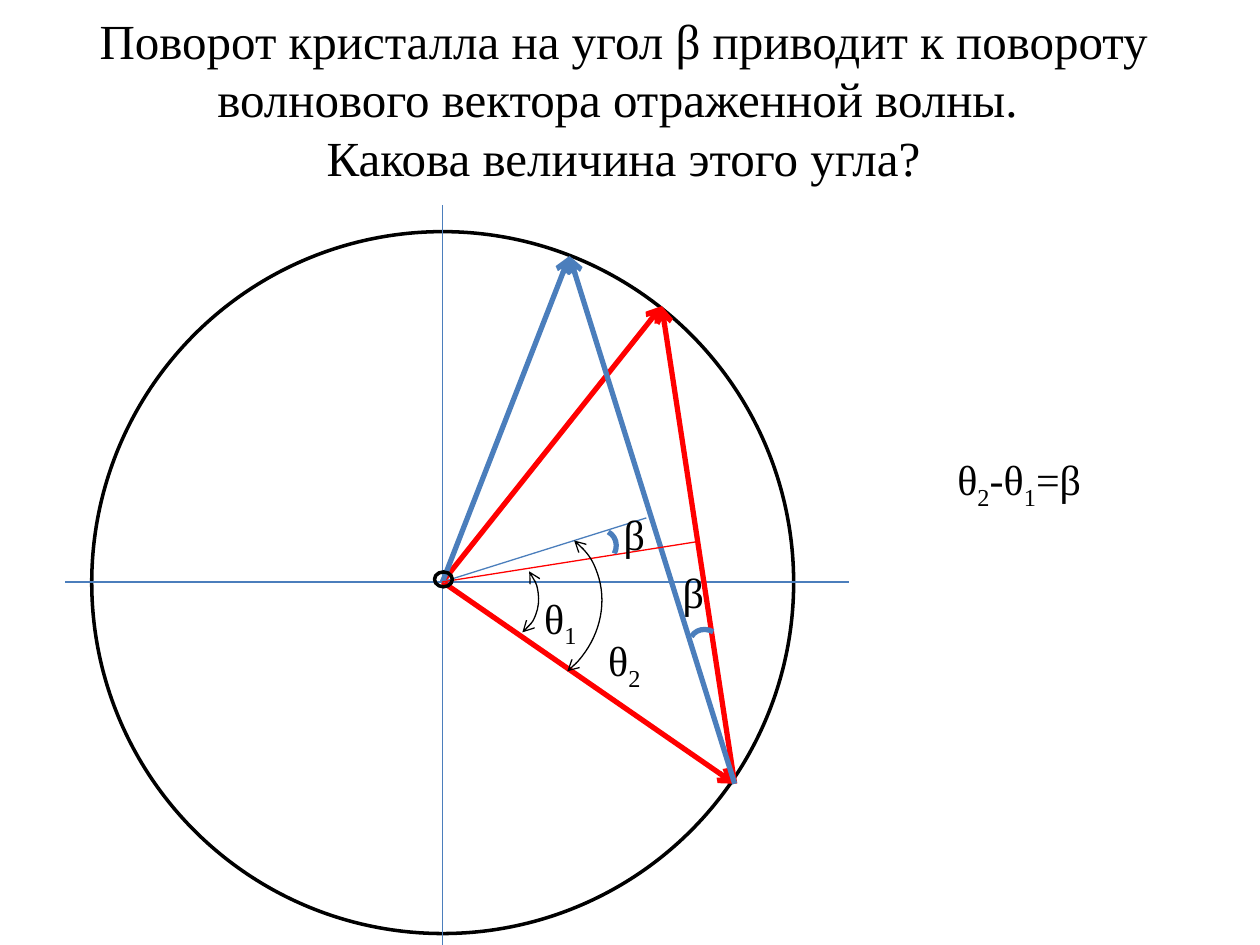
from lxml.etree import SubElement
from pptx import Presentation
from pptx.dml.color import RGBColor
from pptx.enum.shapes import MSO_CONNECTOR as Connector, MSO_SHAPE as Preset
from pptx.enum.text import MSO_AUTO_SIZE as AutoSize, PP_ALIGN as Align
from pptx.oxml.ns import qn
from pptx.util import Cm, Pt

BLACK = RGBColor(0x00, 0x00, 0x00)
WHITE = RGBColor(0xFF, 0xFF, 0xFF)
RED = RGBColor(0xFF, 0x00, 0x00)
BLUE = RGBColor(0x4B, 0x7E, 0xBC)
FONT = "Times New Roman"
THIN, MEDIUM, THICK = 0.75, 2, 3

CENTRE = (8.92, 11.73)
INCIDENT_TIP = (14.81, 15.8)
RED_TIP = (13.34, 6.17)
BLUE_TIP = (11.48, 5.16)


def style_line(shape, color, width, ends=()):
    """Set colour, width and open arrowheads of an outline."""
    shape.line.color.rgb = color
    shape.line.width = Pt(width)
    for end in ends:
        SubElement(shape.line._get_or_add_ln(), qn(f"a:{end}"), type="arrow")


def add_line(page, start, finish, color, width=THIN, ends=()):
    """Draw a straight line between two points in centimetres."""
    line = page.shapes.add_connector(
        Connector.STRAIGHT, *(Cm(value) for value in start + finish))
    style_line(line, color, width, ends)
    SubElement(line._element.spPr, qn("a:effectLst"))


def add_vector(page, start, finish, color):
    """Draw a thick arrow from start to finish."""
    add_line(page, start, finish, color, THICK, ["tailEnd"])


def add_outline(page, preset, place, color, width, fill=None, ends=()):
    """Draw an outlined preset shape, empty unless a fill is given."""
    shape = page.shapes.add_shape(preset, *map(Cm, place))
    shape.shadow.inherit = False
    if fill is None:
        shape.fill.background()
    else:
        shape.fill.solid()
        shape.fill.fore_color.rgb = fill
    style_line(shape, color, width, ends)
    return shape


def add_arc(page, place, rotation, color, width, ends=(), finish=0):
    """Draw a rotated arc that starts at the top of its ellipse."""
    arc = add_outline(page, Preset.ARC, place, color, width, ends=ends)
    arc.adjustments[1] = finish
    arc.rotation = rotation


def add_text(page, place, paragraphs, size=24, wrap=False, align=None, fill=None):
    """Write paragraphs of runs, setting digits as subscripts."""
    box = page.shapes.add_textbox(*map(Cm, place))
    if fill is not None:
        box.fill.solid()
        box.fill.fore_color.rgb = fill
    frame = box.text_frame
    frame.word_wrap = wrap
    frame.auto_size = AutoSize.SHAPE_TO_FIT_TEXT
    for index, runs in enumerate(paragraphs):
        para = frame.add_paragraph() if index else frame.paragraphs[0]
        para.alignment = align
        for text in runs:
            span = para.add_run()
            span.text = text
            span.font.name = FONT
            span.font.size = Pt(size)
            span.font.color.rgb = BLACK
            if text.isdigit():
                span._r.get_or_add_rPr().set("baseline", "-25000")


def add_construction(page):
    """Draw the circle, its axes, the wave vectors and the normals."""
    add_outline(page, Preset.OVAL, (1.85, 4.67, 14.15, 14.15), BLACK, MEDIUM, WHITE)
    add_line(page, (1.32, CENTRE[1]), (17.12, CENTRE[1]), BLUE)
    add_line(page, (CENTRE[0], 4.14), (CENTRE[0], 19.74), BLUE)
    add_vector(page, CENTRE, INCIDENT_TIP, RED)
    for tip, color in ((RED_TIP, RED), (BLUE_TIP, BLUE)):
        add_vector(page, CENTRE, tip, color)
        add_vector(page, INCIDENT_TIP, tip, color)
    add_line(page, CENTRE, (13.03, 10.44), BLUE)
    add_line(page, CENTRE, (14.05, 10.92), RED)
    add_outline(page, Preset.OVAL, (8.76, 11.53, 0.36, 0.3), BLACK, MEDIUM)


def add_angles(page):
    """Mark and label the angles."""
    both = ["headEnd", "tailEnd"]
    add_arc(page, (9.09, 11.18, 1.8, 1.7), 53, BLACK, THIN, both)
    add_arc(page, (8.92, 10.52, 3.15, 3.48), 38.4, BLACK, THIN, both, 9.09)
    add_arc(page, (11.81, 10.69, 0.61, 0.66), 26.9, BLUE, THICK)
    add_arc(page, (13.92, 12.67, 0.61, 0.66), 300.5, BLUE, THICK)
    add_text(page, (10.72, 11.81, 1.78, 1.27), [["θ", "1"]], wrap=True)
    add_text(page, (12.01, 12.67, 1.47, 1.27), [["θ", "2"]], wrap=True)
    add_text(page, (13.51, 11.3, 0.94, 1.27), [["β"]])
    add_text(page, (12.32, 10.13, 0.94, 1.27), [["β"]])


def main():
    """Build and save the slide."""
    deck = Presentation()
    deck.slide_width, deck.slide_height = Cm(25.4), Cm(19.05)
    page = deck.slides.add_slide(deck.slide_layouts[6])
    add_construction(page)
    add_angles(page)
    add_text(page, (19.05, 9.02, 3.1, 1.27),
             [["θ", "2", "-θ", "1", "=β"]], fill=WHITE)
    add_text(page, (-0.13, 0.08, 25.4, 3.84),
             [["Поворот кристалла на угол β приводит к повороту "
               "волнового вектора отраженной волны. "],
              ["Какова величина этого угла?"]],
             size=28, wrap=True, align=Align.CENTER, fill=WHITE)
    deck.save("out.pptx")


if __name__ == "__main__":
    main()
